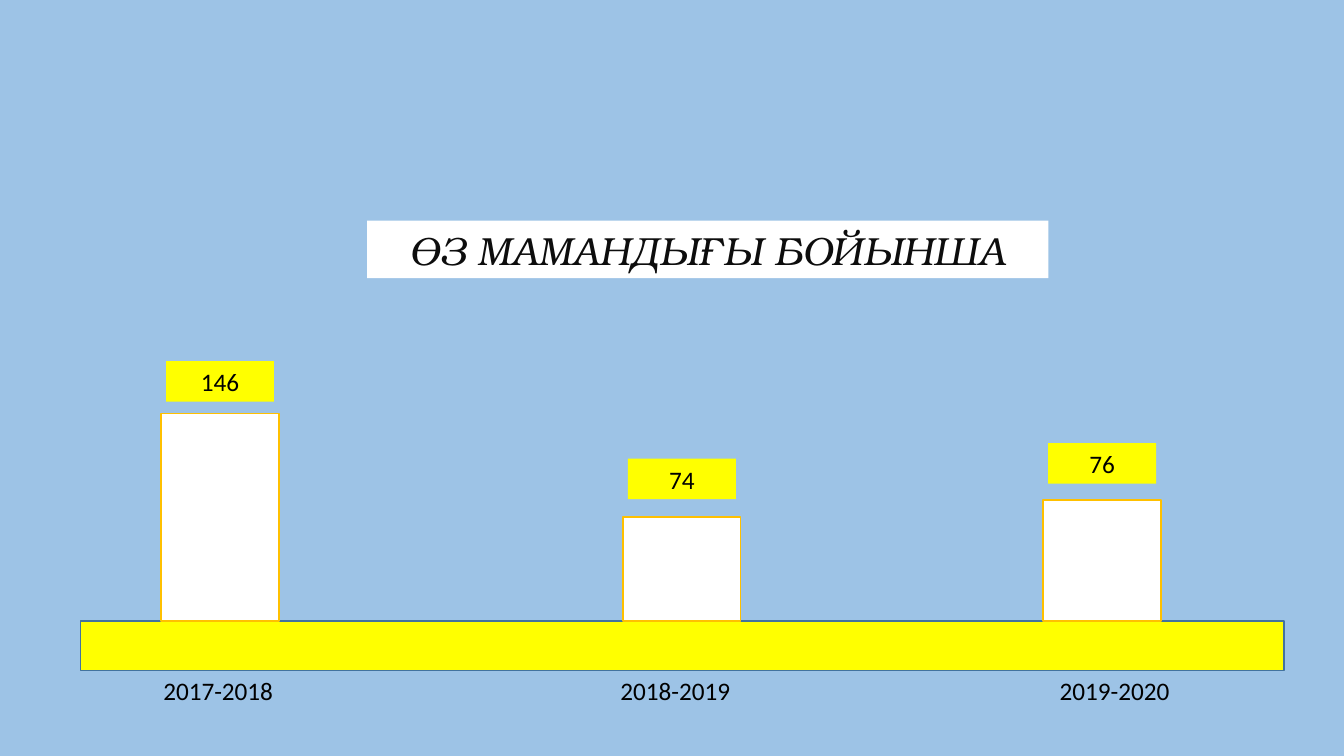
from dataclasses import dataclass

from pptx import Presentation
from pptx.dml.color import RGBColor
from pptx.enum.shapes import MSO_SHAPE
from pptx.enum.text import MSO_ANCHOR, MSO_AUTO_SIZE, PP_ALIGN
from pptx.util import Cm, Pt


@dataclass(frozen=True)
class Theme:
    sky: str = "9DC3E6"
    yellow: str = "FFFF00"
    white: str = "FFFFFF"
    ground_edge: str = "43739E"
    bar_edge: str = "FFC000"
    heading_ink: str = "0D0D0D"
    ink: str = "000000"
    heading_font: str = "TeX Gyre Bonum"
    body_font: str = "Calibri"
    heading_size: int = 28
    body_size: int = 18
    edge_width: int = 1


@dataclass(frozen=True)
class Year:
    label: str
    count: int
    bar_left: float
    bar_height: float
    tag_gap: float
    label_center: float


THEME = Theme()
YEARS = [
    Year("2017-2018", 146, 4.06, 5.23, 0.3, 5.5),
    Year("2018-2019", 74, 15.7, 2.62, 0.45, 17.02),
    Year("2019-2020", 76, 26.29, 3.05, 0.41, 28.09),
]
BAR_WIDTH = 2.97
TAG_WIDTH, TAG_HEIGHT = 2.72, 1.02
LABEL_WIDTH = 5.3


def paint(shape, fill):
    shape.fill.solid()
    shape.fill.fore_color.rgb = RGBColor.from_string(fill)


def write(shape, text, font_name, size, ink, italic=False):
    frame = shape.text_frame
    frame.text = text
    frame.word_wrap = True
    frame.auto_size = MSO_AUTO_SIZE.NONE
    frame.vertical_anchor = MSO_ANCHOR.MIDDLE
    paragraph = frame.paragraphs[0]
    paragraph.alignment = PP_ALIGN.CENTER
    font = paragraph.font
    font.name, font.size, font.italic = font_name, Pt(size), italic
    font.color.rgb = RGBColor.from_string(ink)


def add_block(slide, left, top, width, height, fill, edge=None):
    block = slide.shapes.add_shape(
        MSO_SHAPE.RECTANGLE, Cm(left), Cm(top), Cm(width), Cm(height))
    block.shadow.inherit = False
    paint(block, fill)
    if edge:
        block.line.color.rgb = RGBColor.from_string(edge)
        block.line.width = Pt(THEME.edge_width)
    else:
        block.line.fill.background()
    return block


def add_heading(slide, left, top, width, height):
    heading = slide.shapes.title
    heading.left, heading.top = Cm(left), Cm(top)
    heading.width, heading.height = Cm(width), Cm(height)
    paint(heading, THEME.white)
    write(heading, "ӨЗ МАМАНДЫҒЫ БОЙЫНША", THEME.heading_font,
          THEME.heading_size, THEME.heading_ink, italic=True)


def add_year(slide, year, ground_top, ground_bottom):
    bar_top = ground_top - year.bar_height
    add_block(slide, year.bar_left, bar_top, BAR_WIDTH, year.bar_height,
              THEME.white, THEME.bar_edge)
    tag = add_block(slide, year.bar_left + (BAR_WIDTH - TAG_WIDTH) / 2,
                    bar_top - year.tag_gap - TAG_HEIGHT,
                    TAG_WIDTH, TAG_HEIGHT, THEME.yellow)
    label = slide.shapes.add_textbox(
        Cm(year.label_center - LABEL_WIDTH / 2), Cm(ground_bottom),
        Cm(LABEL_WIDTH), Cm(TAG_HEIGHT))
    for holder, text in ((tag, str(year.count)), (label, year.label)):
        write(holder, text, THEME.body_font, THEME.body_size, THEME.ink)


def add_bars(slide, left, top, width, height):
    add_block(slide, left, top, width, height, THEME.yellow, THEME.ground_edge)
    for year in YEARS:
        add_year(slide, year, top, top + height)


def main():
    deck = Presentation()
    deck.slide_width, deck.slide_height = Cm(33.87), Cm(19.05)
    slide = deck.slides.add_slide(deck.slide_layouts[5])
    paint(slide.background, THEME.sky)
    add_heading(slide, 9.25, 5.56, 17.17, 1.45)
    add_bars(slide, 2.03, 15.65, 30.33, 1.24)
    deck.save("out.pptx")


if __name__ == "__main__":
    main()
